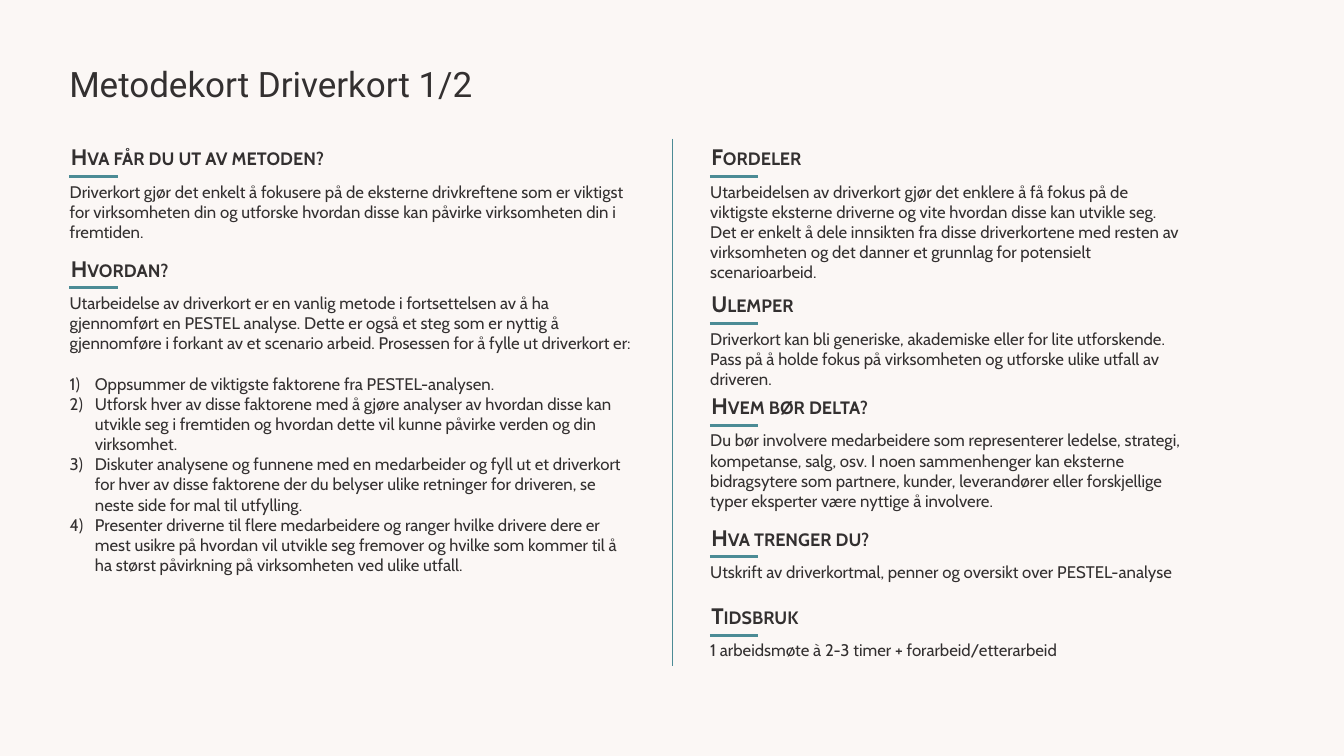
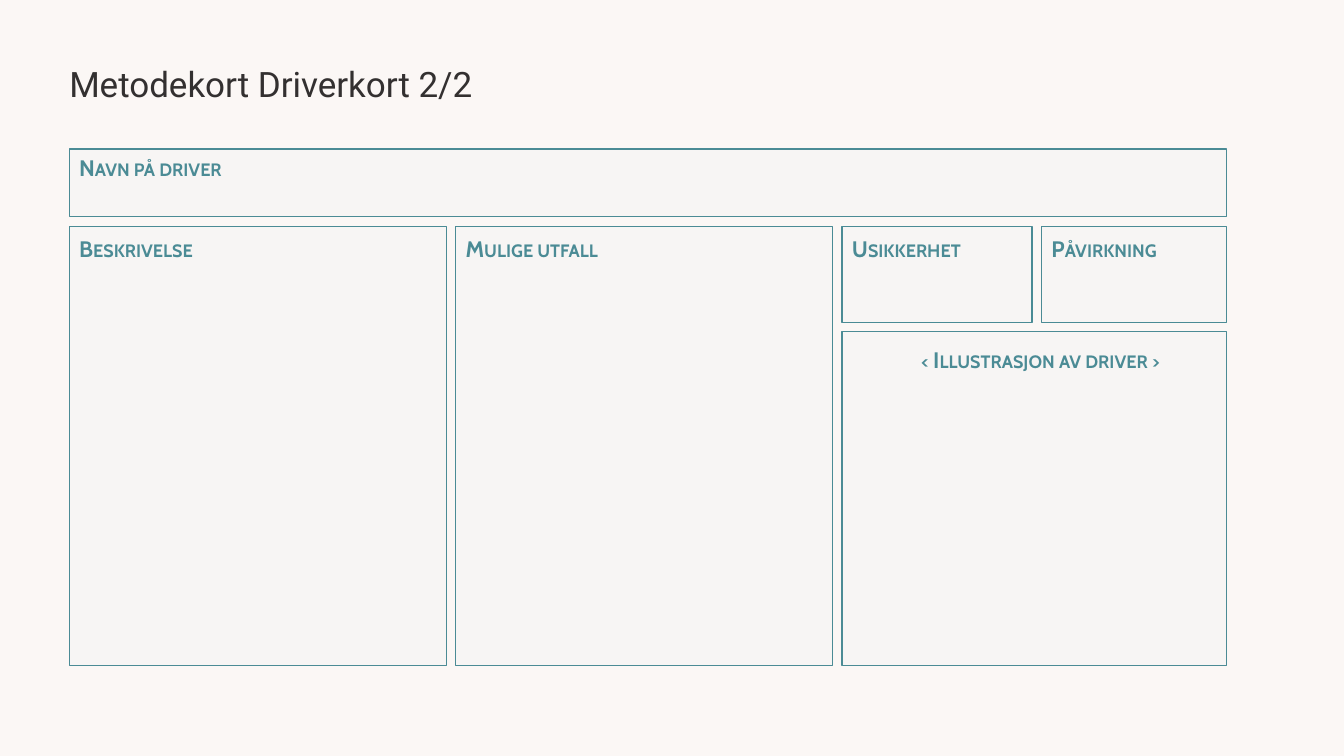
from lxml.etree import SubElement
from pptx import Presentation
from pptx.dml.color import RGBColor
from pptx.enum.shapes import MSO_CONNECTOR as Connector, MSO_SHAPE as Preset
from pptx.enum.text import MSO_ANCHOR as Anchor, PP_ALIGN as Align
from pptx.oxml.ns import qn
from pptx.util import Emu, Pt

PX = 9525
SLIDE_WIDTH, SLIDE_HEIGHT = 1280, 720
LEFT, BOTTOM = 66, 634
INSET, HEADING_HEIGHT = 9, 36
BACKGROUND = RGBColor(0xFB, 0xF7, 0xF5)
INK = RGBColor(0x33, 0x30, 0x30)
TEAL = RGBColor(0x4B, 0x8B, 0x95)
PALE_TEAL = RGBColor(0xD9, 0xE9, 0xEC)
TITLE_FONT, BODY_FONT = "Roboto", "Cabin"

LEFT_SECTIONS = [
    (168, 68, "Hva får du ut av metoden?",
     "Driverkort gjør det enkelt å fokusere på de eksterne drivkreftene som er viktigst for "
     "virksomheten din og utforske hvordan disse kan påvirke virksomheten din i fremtiden.", []),
    (274, 281, "Hvordan?",
     "Utarbeidelse av driverkort er en vanlig metode i fortsettelsen av å ha gjennomført en PESTEL "
     "analyse. Dette er også et steg som er nyttig å gjennomføre i forkant av et scenario arbeid. "
     "Prosessen for å fylle ut driverkort er:",
     ["Oppsummer de viktigste faktorene fra PESTEL-analysen.",
      "Utforsk hver av disse faktorene med å gjøre analyser av hvordan disse kan utvikle seg i "
      "fremtiden og hvordan dette vil kunne påvirke verden og din virksomhet.",
      "Diskuter analysene og funnene med en medarbeider og fyll ut et driverkort for hver av disse "
      "faktorene der du belyser ulike retninger for driveren, se neste side for mal til utfylling.",
      "Presenter driverne til flere medarbeidere og ranger hvilke drivere dere er mest usikre på "
      "hvordan vil utvikle seg fremover og hvilke som kommer til å ha størst påvirkning på "
      "virksomheten ved ulike utfall."]),
]
RIGHT_SECTIONS = [
    (168, 87, "Fordeler",
     "Utarbeidelsen av driverkort gjør det enklere å få fokus på de viktigste eksterne driverne og "
     "vite hvordan disse kan utvikle seg. Det er enkelt å dele innsikten fra disse driverkortene "
     "med resten av virksomheten og det danner et grunnlag for potensielt scenarioarbeid.", []),
    (308, 68, "Ulemper",
     "Driverkort kan bli generiske, akademiske eller for lite utforskende. Pass på å holde fokus på "
     "virksomheten og utforske ulike utfall av driveren.", []),
    (405, 87, "Hvem bør delta?",
     "Du bør involvere medarbeidere som representerer ledelse, strategi, kompetanse, salg, osv. I "
     "noen sammenhenger kan eksterne bidragsytere som partnere, kunder, leverandører eller "
     "forskjellige typer eksperter være nyttige å involvere.", []),
    (530, 29, "Hva trenger du?",
     "Utskrift av driverkortmal, penner og oversikt over PESTEL-analyse", []),
    (605, 29, "Tidsbruk", "1 arbeidsmøte à 2-3 timer + forarbeid/etterarbeid", []),
]


def px(*lengths):
    """Turn pixel lengths into EMU."""
    return [Emu(length * PX) for length in lengths]


def add_run(paragraph, text, size, font_name=BODY_FONT, color=INK):
    """Append one styled run to a paragraph."""
    run = paragraph.add_run()
    run.text = text
    run.font.size = Pt(size)
    run.font.name = font_name
    run.font.color.rgb = color
    return run


def add_text_frame(slide, left, top, width, height):
    """Place a wrapping text box and return its frame."""
    frame = slide.shapes.add_textbox(*px(left, top, width, height)).text_frame
    frame.word_wrap = True
    return frame


def add_line(slide, start, end, weight):
    """Draw a straight teal line."""
    line = slide.shapes.add_connector(Connector.STRAIGHT, *px(*start, *end))
    line.line.color.rgb = TEAL
    line.line.width = Pt(weight)
    SubElement(line._element.spPr, qn("a:effectLst"))


def add_heading(slide, left, top, width, text, color=INK):
    """Place a bold heading in small capitals and return its frame."""
    frame = add_text_frame(slide, left, top, width, HEADING_HEIGHT)
    run = add_run(frame.paragraphs[0], text, 16, color=color)
    run.font.bold = True
    run.font._element.set("cap", "small")
    return frame


def add_step(frame, text, space_before):
    """Append one numbered step to a text frame."""
    paragraph = frame.add_paragraph()
    properties = paragraph._p.get_or_add_pPr()
    properties.set("marL", str(24 * PX))
    properties.set("indent", str(-24 * PX))
    SubElement(properties, qn("a:buFont"), typeface="+mj-lt")
    SubElement(properties, qn("a:buAutoNum"), type="arabicParenR")
    paragraph.space_before = Pt(space_before)
    add_run(paragraph, text, 12)


def add_section(slide, left, top, width, height, heading, body, steps):
    """Place an underlined heading with body text and steps below the rule."""
    add_heading(slide, left - INSET + 1, top - HEADING_HEIGHT, 471, heading)
    frame = add_text_frame(slide, left - INSET, top, width, height)
    add_run(frame.paragraphs[0], body, 12)
    for index, step in enumerate(steps):
        add_step(frame, step, 0 if index else 14.4)
    add_line(slide, (left, top), (left + 46, top), 2.25)


def add_column(slide, left, width, sections):
    """Place a column of sections."""
    for top, height, heading, body, steps in sections:
        add_section(slide, left, top, width, height, heading, body, steps)


def add_card(slide, left, top, width, height):
    """Draw an outlined, nearly transparent card field."""
    card = slide.shapes.add_shape(Preset.RECTANGLE, *px(left, top, width, height))
    card.shadow.inherit = False
    card.fill.solid()
    card.fill.fore_color.rgb = PALE_TEAL
    color = card._element.spPr.find(qn("a:solidFill")).find(qn("a:srgbClr"))
    SubElement(color, qn("a:alpha"), val="10000")
    card.line.color.rgb = TEAL
    card.line.width = Pt(1)


def add_titled_slide(presentation, title):
    """Add a blank slide with the shared background and title."""
    slide = presentation.slides.add_slide(presentation.slide_layouts[6])
    slide.background.fill.solid()
    slide.background.fill.fore_color.rgb = BACKGROUND
    frame = add_text_frame(slide, LEFT, 60, 1147, 40)
    frame.margin_left = frame.margin_right = frame.margin_top = frame.margin_bottom = 0
    frame.vertical_anchor = Anchor.MIDDLE
    frame.paragraphs[0].line_spacing = Pt(30)
    add_run(frame.paragraphs[0], title, 25, TITLE_FONT)
    return slide


def build_method_slide(presentation):
    """Build the two-column description of the method."""
    slide = add_titled_slide(presentation, "Metodekort Driverkort 1/2")
    middle = SLIDE_WIDTH // 2
    add_column(slide, LEFT, 555, LEFT_SECTIONS)
    add_line(slide, (middle, 132), (middle, BOTTOM), 0.5)
    add_column(slide, middle + 36, 471, RIGHT_SECTIONS)


def build_template_slide(presentation):
    """Build the driver card to be filled in."""
    slide = add_titled_slide(presentation, "Metodekort Driverkort 2/2")
    top, width, gap = 142, 1102, 9
    name_height, column_width, small_width, small_height = 64, 359, 181, 91
    row_top = top + name_height + gap + 1
    row_height = BOTTOM - row_top
    outcome_left = LEFT + column_width + gap
    side_left = outcome_left + column_width + gap
    side_width = LEFT + width - side_left
    impact_left = side_left + small_width + gap
    picture_top = row_top + small_height + gap
    fields = [
        ("Navn på driver", LEFT, top, width, name_height, 0, 248),
        ("Beskrivelse", LEFT, row_top, column_width, row_height, 3, 248),
        ("Mulige utfall", outcome_left, row_top, column_width, row_height, 3, 248),
        ("Usikkerhet", side_left, row_top, small_width, small_height, 3, 170),
        ("Påvirkning", impact_left, row_top, side_width - small_width - gap, small_height, 3, 170),
    ]
    for label, left, field_top, field_width, height, offset, label_width in fields:
        add_card(slide, left, field_top, field_width, height)
        add_heading(slide, left, field_top + offset, label_width, label, TEAL)
    add_card(slide, side_left, picture_top, side_width, BOTTOM - picture_top)
    frame = add_heading(slide, side_left + 64, picture_top + 8, 250,
                        "< Illustrasjon av driver >", TEAL)
    frame.vertical_anchor = Anchor.MIDDLE
    frame.paragraphs[0].alignment = Align.CENTER


def main():
    """Build and save the presentation."""
    presentation = Presentation()
    presentation.slide_width, presentation.slide_height = px(SLIDE_WIDTH, SLIDE_HEIGHT)
    build_method_slide(presentation)
    build_template_slide(presentation)
    presentation.save("out.pptx")


if __name__ == "__main__":
    main()
